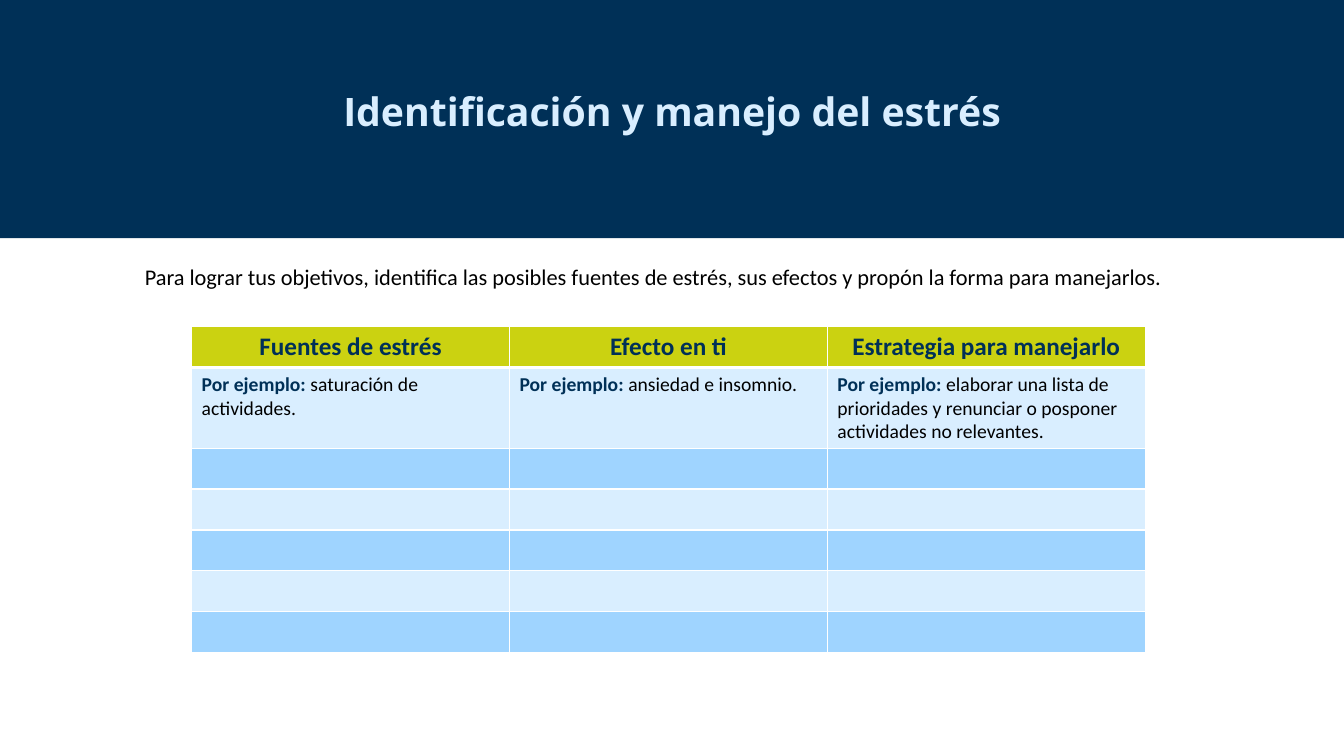
from lxml.etree import SubElement
from pptx import Presentation
from pptx.dml.color import RGBColor
from pptx.enum.shapes import MSO_SHAPE
from pptx.enum.text import MSO_ANCHOR, PP_ALIGN
from pptx.oxml.ns import qn
from pptx.util import Cm, Pt

NAVY = RGBColor(0x00, 0x30, 0x57)
LIME = RGBColor(0xCB, 0xD2, 0x11)
PALE_BLUE = RGBColor(0xD9, 0xEE, 0xFF)
SKY_BLUE = RGBColor(0x9F, 0xD4, 0xFF)
BLACK = RGBColor(0x00, 0x00, 0x00)
WHITE = RGBColor(0xFF, 0xFF, 0xFF)

HEADERS = ["Fuentes de estrés", "Efecto en ti", "Estrategia para manejarlo"]
EXAMPLES = [
    "saturación de actividades.",
    "ansiedad e insomnio.",
    "elaborar una lista de prioridades y renunciar o posponer actividades no relevantes.",
]
EMPTY_ROWS = 5


class SlideBuilder:
    body_font = "Calibri"
    title_font = "Open Sans"

    def __init__(self, deck):
        self.slide = deck.slides.add_slide(deck.slide_layouts[6])

    def style(self, font, size, color, bold=False, name=body_font):
        font.name = name
        font.size = Pt(size)
        font.bold = bold
        font.color.rgb = color

    def band(self, left, top, width, height, color):
        band = self.slide.shapes.add_shape(MSO_SHAPE.RECTANGLE, left, top, width, height)
        band.shadow.inherit = False
        band.fill.solid()
        band.fill.fore_color.rgb = color
        band.line.fill.background()

    def text(self, left, top, width, height, words):
        box = self.slide.shapes.add_textbox(left, top, width, height)
        box.text_frame.word_wrap = True
        para = box.text_frame.paragraphs[0]
        para.text = words
        return box.text_frame, para

    def title(self, left, top, width, height, words):
        frame, para = self.text(left, top, width, height, words)
        frame.vertical_anchor = MSO_ANCHOR.MIDDLE
        para.alignment = PP_ALIGN.CENTER
        para.line_spacing = 0.9
        self.style(para.font, 28, PALE_BLUE, True, self.title_font)

    def instruction(self, left, top, width, height, words):
        frame, para = self.text(left, top, width, height, words)
        self.style(para.font, 16, BLACK)

    def borders(self, cell, top=1, bottom=1):
        properties = cell._tc.get_or_add_tcPr()
        for side, points in (("L", 1), ("R", 1), ("T", top), ("B", bottom)):
            line = SubElement(properties, qn(f"a:ln{side}"), w=str(Pt(points)))
            fill = SubElement(line, qn("a:solidFill"))
            SubElement(fill, qn("a:srgbClr"), val=str(WHITE))

    def header_cell(self, cell, words):
        para = cell.text_frame.paragraphs[0]
        para.text = words
        para.alignment = PP_ALIGN.CENTER
        cell.vertical_anchor = MSO_ANCHOR.MIDDLE
        self.style(para.font, 18, NAVY, True)

    def example_cell(self, cell, words):
        para = cell.text_frame.paragraphs[0]
        for part, color, bold in (("Por ejemplo: ", NAVY, True), (words, BLACK, False)):
            span = para.add_run()
            span.text = part
            self.style(span.font, 14, color, bold)

    def table(self, left, top, width, row_height, example_height):
        row_count = EMPTY_ROWS + 2
        height = row_height * (row_count - 1) + example_height
        table = self.slide.shapes.add_table(
            row_count, len(HEADERS), left, top, width, height
        ).table
        table.horz_banding = False
        for index, row in enumerate(table.rows):
            row.height = example_height if index == 1 else row_height
            color = LIME if index == 0 else (SKY_BLUE, PALE_BLUE)[index % 2]
            for cell in row.cells:
                self.borders(cell, 3 if index == 1 else 1, 3 if index == 0 else 1)
                cell.fill.solid()
                cell.fill.fore_color.rgb = color
        for column, (header, example) in enumerate(zip(HEADERS, EXAMPLES)):
            self.header_cell(table.cell(0, column), header)
            self.example_cell(table.cell(1, column), example)


def main():
    deck = Presentation()
    deck.slide_width = Cm(33.87)
    deck.slide_height = Cm(19.05)
    page = SlideBuilder(deck)
    page.band(0, 0, deck.slide_width, Cm(6), NAVY)
    page.title(Cm(2.33), Cm(1.02), Cm(29.21), Cm(3.68), "Identificación y manejo del estrés")
    page.instruction(
        Cm(3.4), Cm(6.5), Cm(27.05), Cm(1.7),
        "Para lograr tus objetivos, identifica las posibles fuentes de estrés, "
        "sus efectos y propón la forma para manejarlos.",
    )
    page.table(Cm(4.83), Cm(8.23), Cm(24.03), Cm(1.03), Cm(2.03))
    deck.save("out.pptx")


if __name__ == "__main__":
    main()
